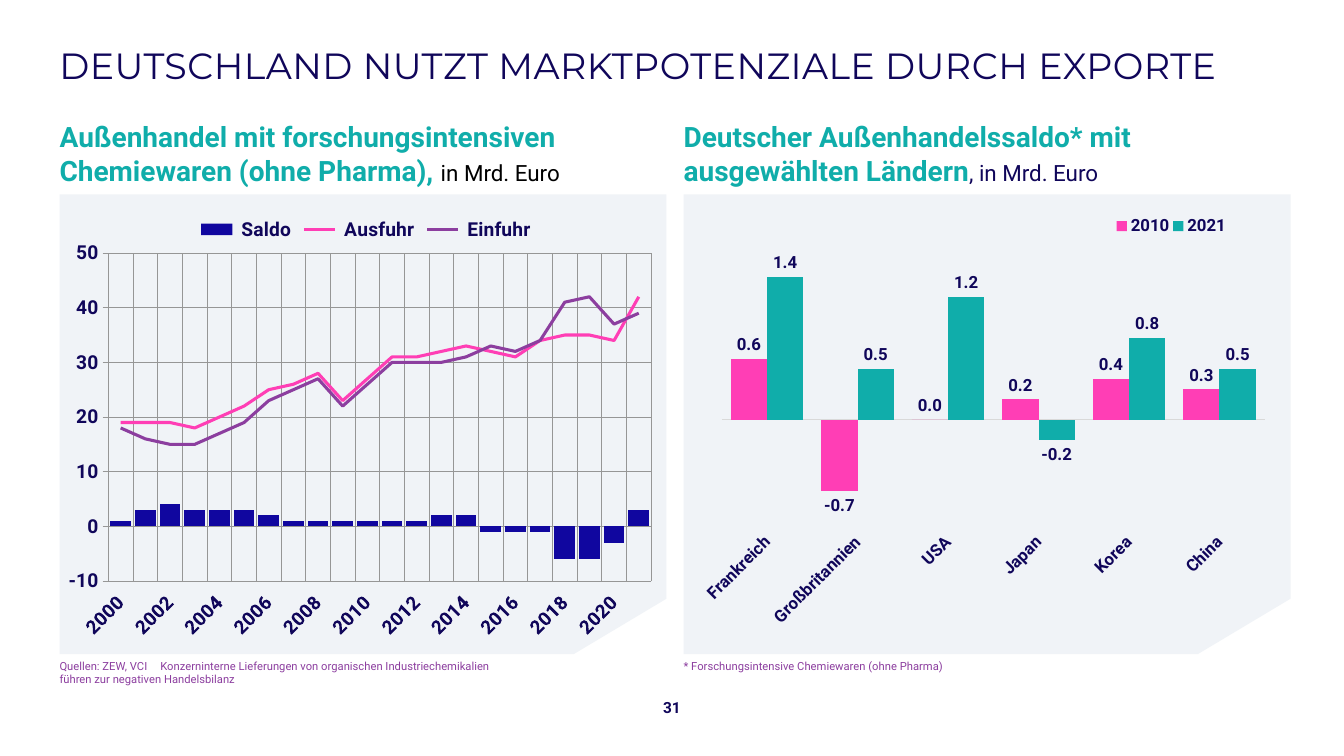
from lxml import etree
from pptx import Presentation
from pptx.chart.data import CategoryChartData
from pptx.dml.color import RGBColor
from pptx.enum.chart import (XL_CHART_TYPE, XL_LABEL_POSITION, XL_LEGEND_POSITION,
                             XL_MARKER_STYLE, XL_TICK_LABEL_POSITION, XL_TICK_MARK)
from pptx.enum.text import MSO_ANCHOR, PP_ALIGN
from pptx.oxml.ns import qn
from pptx.util import Inches, Pt

COLUMN = XL_CHART_TYPE.COLUMN_CLUSTERED
OUT_END = XL_LABEL_POSITION.OUTSIDE_END
TOP = XL_LEGEND_POSITION.TOP
NO_MARK = XL_MARKER_STYLE.NONE
LOW = XL_TICK_LABEL_POSITION.LOW
NO_TICK, TICK = XL_TICK_MARK.NONE, XL_TICK_MARK.OUTSIDE
MIDDLE, CENTER = MSO_ANCHOR.MIDDLE, PP_ALIGN.CENTER

NAVY = RGBColor(0x10, 0x06, 0x5A)
BLUE = RGBColor(0x10, 0x06, 0x9F)
PINK = RGBColor(0xFF, 0x3E, 0xB5)
PURPLE = RGBColor(0x8C, 0x3E, 0x9F)
TEAL = RGBColor(0x10, 0xAD, 0xAA)
BLACK = RGBColor(0, 0, 0)
PALE = RGBColor(0xF0, 0xF3, 0xF7)
GRAY = RGBColor(0x96, 0x96, 0x96)
LIGHT = RGBColor(0xD9, 0xD9, 0xD9)

# Grid: two columns
LEFT, RIGHT = 0.59, 6.78
WIDE = 6.02
HEAD, PANEL, NOTE = 1.19, 1.93, 6.54

deck = Presentation()
deck.slide_width, deck.slide_height = Inches(13.33), Inches(7.5)
slide = deck.slides.add_slide(deck.slide_layouts[6])
shapes = slide.shapes


def write(x, y, w, h, lines, size, color, font="Roboto", bold=False):
    """Add a text box; each line is a list of run texts."""
    frame = shapes.add_textbox(Inches(x), Inches(y), Inches(w), Inches(h)).text_frame
    frame.word_wrap = True
    frame.margin_left = frame.margin_right = 0
    frame.margin_top = frame.margin_bottom = 0
    for i, line in enumerate(lines):
        para = frame.add_paragraph() if i else frame.paragraphs[0]
        para.font.size, para.font.name = Pt(size), font
        para.font.bold, para.font.color.rgb = bold, color
        for text in line:
            para.add_run().text = text
    return frame


def place(part, index, **sides):
    """Give a plot area or legend a fixed place as shares of the chart."""
    for old in part.findall(qn("c:layout")):
        part.remove(old)
    layout = etree.Element(qn("c:layout"))
    manual = etree.SubElement(layout, qn("c:manualLayout"))
    if index == 0:
        etree.SubElement(manual, qn("c:layoutTarget"), val="inner")
    for name in ("xMode", "yMode"):
        etree.SubElement(manual, qn("c:" + name), val="edge")
    for name, share in sides.items():
        etree.SubElement(manual, qn("c:" + name), val=str(share))
    part.insert(index, layout)


# Title and page number
title = write(LEFT, 0.15, 12.2, 0.98,
              [["DEUTSCHLAND NUTZT MARKTPOTENZIALE DURCH EXPORTE"]], 26, NAVY, "Montserrat")
title.vertical_anchor = MIDDLE
title.paragraphs[0].runs[0].font._element.set("spc", "30")
page = write(6.37, 6.88, 0.59, 0.28, [["31"]], 11, NAVY, bold=True)
page.vertical_anchor = MIDDLE
page.paragraphs[0].alignment = CENTER

# Columns: heading, panel with cut corner, note
columns = [
    (LEFT, "Außenhandel mit forschungsintensiven Chemiewaren (ohne Pharma), ",
     "in Mrd. Euro", BLACK,
     [["Quellen: ZEW, VCI\tKonzerninterne Lieferungen von organischen Industriechemikalien"],
      ["führen zur negativen Handelsbilanz"]]),
    (RIGHT, "Deutscher Außenhandelssaldo* mit ausgewählten Ländern",
     ", in Mrd. Euro", NAVY,
     [["* Forschungsintensive Chemiewaren (ohne Pharma)"]]),
]
for x, topic, unit, color, note in columns:
    head = write(x, HEAD, WIDE, 0.31, [[topic, unit]], 20, TEAL, bold=True)
    tail = head.paragraphs[0].runs[1].font
    tail.size, tail.bold, tail.color.rgb = Pt(16), False, color
    write(x, NOTE, 5.08, 0.13, note, 8, PURPLE)

    pen = shapes.build_freeform(Inches(x), Inches(PANEL))
    corners = [(WIDE, 0), (WIDE, 4.01), (5.1, 4.56), (0, 4.56)]
    pen.add_line_segments([(Inches(x + a), Inches(PANEL + b)) for a, b in corners])
    panel = pen.convert_to_shape()
    panel.shadow.inherit = False
    panel.fill.solid()
    panel.fill.fore_color.rgb = PALE
    panel.line.fill.background()

# Chart data
trade = CategoryChartData()
trade.categories = [str(year) for year in range(2000, 2022)]
trade.add_series(" Saldo", [1, 3, 4, 3, 3, 3, 2, 1, 1, 1, 1,
                            1, 1, 2, 2, -1, -1, -1, -6, -6, -3, 3])
trade.add_series(" Ausfuhr", [19, 19, 19, 18, 20, 22, 25, 26, 28, 23, 27,
                              31, 31, 32, 33, 32, 31, 34, 35, 35, 34, 42])
trade.add_series(" Einfuhr", [18, 16, 15, 15, 17, 19, 23, 25, 27, 22, 26,
                              30, 30, 30, 31, 33, 32, 34, 41, 42, 37, 39])
lands = CategoryChartData()
lands.categories = ["Frankreich", "Großbritannien", "USA", "Japan", "Korea", "China"]
lands.add_series("2010", [0.6, -0.7, 0, 0.2, 0.4, 0.3])
lands.add_series("2021", [1.4, 0.5, 1.2, -0.2, 0.8, 0.5])

# Both charts: frame, font, axes, legend, bars
charts = []
for x, data, size, gap, low, high, step, line, fills in [
        (0.68, trade, 14, 20, -10, 50, 10, GRAY, [BLUE]),
        (6.87, lands, 12, 50, -1, 2, 0.5, LIGHT, [PINK, TEAL])]:
    chart = shapes.add_chart(COLUMN, Inches(x), Inches(2.05),
                             Inches(5.79), Inches(4.29), data).chart
    charts.append(chart)
    chart.has_title = False
    chart.font.size, chart.font.name = Pt(size), "Roboto"
    chart.font.bold, chart.font.color.rgb = True, NAVY
    chart.has_legend = True
    chart.legend.position = TOP
    chart.legend.include_in_layout = False
    bars = chart.plots[0]
    bars.gap_width, bars.vary_by_categories = gap, False
    for series, fill in zip(bars.series, fills):
        series.invert_if_negative = False
        series.format.fill.solid()
        series.format.fill.fore_color.rgb = fill
    cats, vals = chart.category_axis, chart.value_axis
    vals.minimum_scale, vals.maximum_scale, vals.major_unit = low, high, step
    cats.tick_label_position = LOW
    cats.format.line.color.rgb, cats.format.line.width = line, Pt(0.75)
    cats.tick_labels.font.size = Pt(size)
    cats._element.find(qn("c:txPr")).find(qn("a:bodyPr")).set("rot", "-2700000")

# Left chart: grid, and two of the series as lines
flow, saldo = charts
for axis in (flow.category_axis, flow.value_axis):
    axis.major_tick_mark = TICK
    axis.has_major_gridlines = True
    for stroke in (axis.format.line, axis.major_gridlines.format.line):
        stroke.color.rgb, stroke.width = GRAY, Pt(0.75)
flow.value_axis.tick_labels.number_format = "0"
flow.value_axis.tick_labels.number_format_is_linked = False
skip = etree.Element(qn("c:tickLblSkip"), val="2")
flow.category_axis._element.find(qn("c:noMultiLvlLbl")).addprevious(skip)

bar = flow.plots[0]._element
curve = bar.makeelement(qn("c:lineChart"))
etree.SubElement(curve, qn("c:grouping"), val="standard")
etree.SubElement(curve, qn("c:varyColors"), val="0")
for item in bar.findall(qn("c:ser"))[1:]:
    for flag in item.findall(qn("c:invertIfNegative")):
        item.remove(flag)
    curve.append(item)
etree.SubElement(curve, qn("c:marker"), val="1")
for ref in bar.findall(qn("c:axId")):
    etree.SubElement(curve, qn("c:axId"), val=ref.get("val"))
bar.addnext(curve)
for series, color in zip(flow.plots[1].series, (PINK, PURPLE)):
    series.smooth = False
    series.marker.style = NO_MARK
    series.format.line.color.rgb, series.format.line.width = color, Pt(2.25)
place(bar.getparent(), 0, x=0.05, y=0.11, w=0.948, h=0.777)

# Right chart: value labels, no value axis, legend at top right
saldo.category_axis.major_tick_mark = NO_TICK
saldo.value_axis.has_major_gridlines = False
saldo.value_axis.visible = False
for series in saldo.plots[0].series:
    labels = series.data_labels
    labels.show_value, labels.position = True, OUT_END
    labels.number_format, labels.number_format_is_linked = "0.0", False
    labels.font.size, labels.font.name = Pt(12), "Roboto"
    labels.font.bold, labels.font.color.rgb = True, NAVY
place(saldo.plots[0]._element.getparent(), 0, x=0.05, y=0.02, w=0.93, h=0.71)
place(saldo.legend._element, 1, x=0.72, y=0.01, w=0.2, h=0.07)

deck.save("out.pptx")
